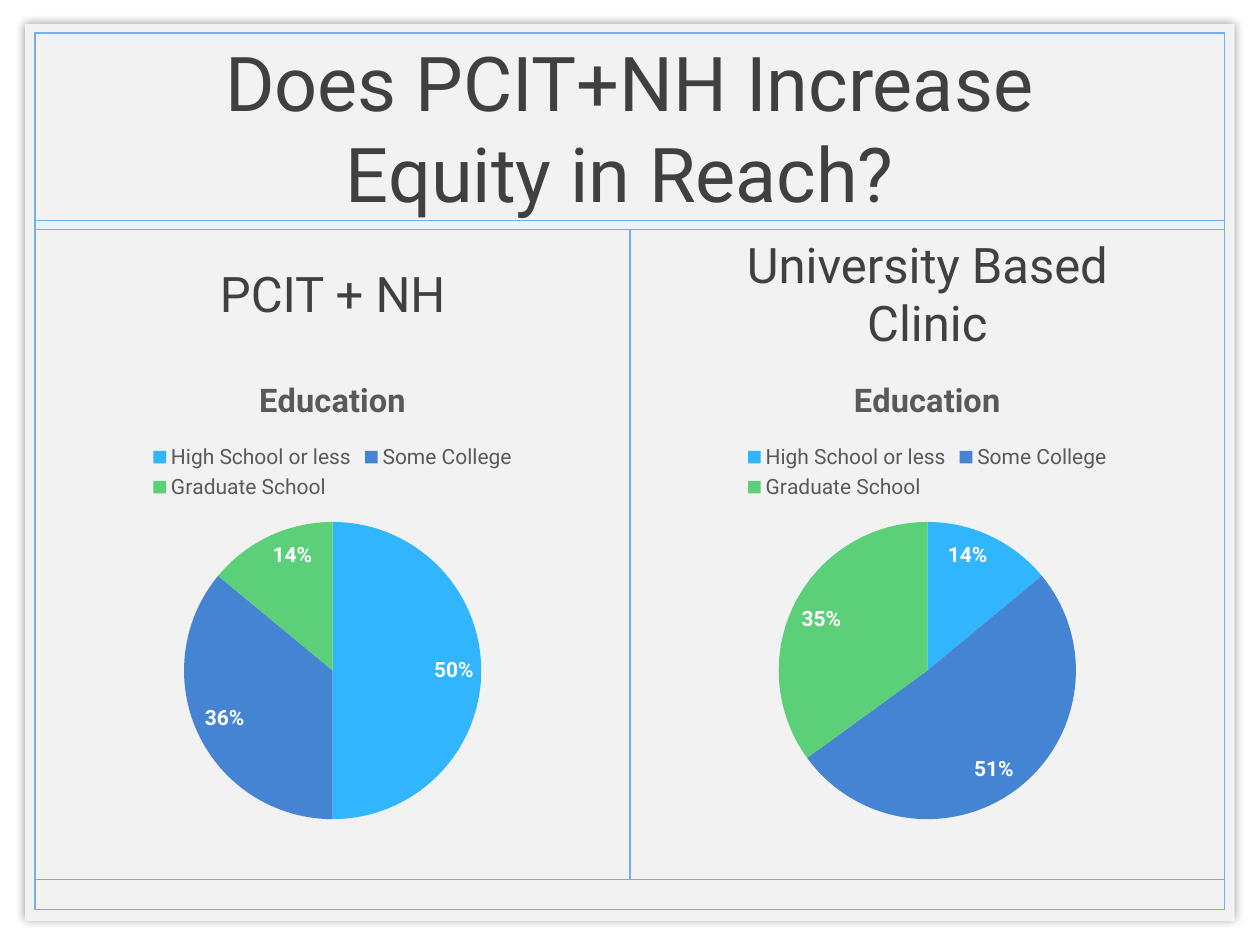
from dataclasses import dataclass

from lxml.etree import SubElement
from pptx import Presentation
from pptx.chart.data import CategoryChartData
from pptx.dml.color import RGBColor
from pptx.enum.chart import XL_CHART_TYPE, XL_LABEL_POSITION, XL_LEGEND_POSITION
from pptx.enum.shapes import MSO_CONNECTOR, MSO_SHAPE
from pptx.enum.text import MSO_ANCHOR, MSO_AUTO_SIZE, PP_ALIGN
from pptx.oxml.ns import qn
from pptx.util import Emu, Pt

FONT = "Roboto"
COLORS = {
    "panel": "F2F2F2",
    "border": "73ACF8",
    "band": "E8F5FE",
    "text": "404040",
    "chart_text": "595959",
    "label": "FFFFFF",
    "shadow": "000000",
}
LEVELS = {
    "High School or less": "31B6FD",
    "Some College": "4584D3",
    "Graduate School": "5BD078",
}
HEADING_TOP, HEADING_HEIGHT = 187, 91
CHART_TOP, CHART_HEIGHT = 283, 381
COLUMN_WIDTH = 390


@dataclass
class Program:
    heading: str
    left: int
    percents: tuple[int, ...]


PROGRAMS = [
    Program("PCIT + NH", 69, (50, 36, 14)),
    Program("University Based Clinic", 541, (14, 51, 35)),
]


def px(length: int) -> Emu:
    """Convert px, at 100 to the inch, to EMU."""
    return Emu(length * 9144)


def color(name: str) -> RGBColor:
    return RGBColor.from_string(COLORS[name])


def style_font(font, size: float, color_name: str, bold: bool = False) -> None:
    font.name = FONT
    font.size = Pt(size)
    font.bold = bold
    font.color.rgb = color(color_name)


def add_rectangle(slide, left: int, top: int, width: int, height: int,
                  fill: str | None = None, line_width: float = 0):
    rectangle = slide.shapes.add_shape(
        MSO_SHAPE.RECTANGLE, px(left), px(top), px(width), px(height))
    rectangle.shadow.inherit = False
    if fill:
        rectangle.fill.solid()
        rectangle.fill.fore_color.rgb = color(fill)
    else:
        rectangle.fill.background()
    if line_width:
        rectangle.line.color.rgb = color("border")
        rectangle.line.width = Pt(line_width)
    else:
        rectangle.line.fill.background()
    return rectangle


def add_soft_shadow(shape) -> None:
    effects = shape.element.spPr.find(qn("a:effectLst"))
    shadow = SubElement(effects, qn("a:outerShdw"), blurRad=str(Pt(5)),
                        dist="0", dir="0", algn="ctr", rotWithShape="0")
    tint = SubElement(shadow, qn("a:srgbClr"), val=COLORS["shadow"])
    SubElement(tint, qn("a:alpha"), val="40000")


def add_rule(slide, x1: int, y1: int, x2: int, y2: int):
    rule = slide.shapes.add_connector(
        MSO_CONNECTOR.STRAIGHT, px(x1), px(y1), px(x2), px(y2))
    rule.line.color.rgb = color("border")
    rule.line.width = Pt(1)
    SubElement(rule.element.spPr, qn("a:effectLst"))
    return rule


def write_centered(shape, text: str, size: float) -> None:
    frame = shape.text_frame
    frame.word_wrap = True
    frame.auto_size = MSO_AUTO_SIZE.NONE
    frame.vertical_anchor = MSO_ANCHOR.MIDDLE
    paragraph = frame.paragraphs[0]
    paragraph.alignment = PP_ALIGN.CENTER
    run = paragraph.add_run()
    run.text = text
    style_font(run.font, size, "text")


def draw_background(slide) -> None:
    panel = add_rectangle(slide, 20, 19, 960, 712, fill="panel")
    add_soft_shadow(panel)
    add_rectangle(slide, 28, 26, 944, 696, line_width=1)
    add_rule(slide, 28, 698, 972, 698)
    band = add_rectangle(slide, 28, 175, 944, 7, fill="band", line_width=0.25)
    divider = add_rule(slide, 500, 182, 500, 698)
    divider.begin_connect(band, 2)


def place_title(slide, text: str) -> None:
    title = slide.shapes.title
    title.left, title.top = px(98), px(27)
    title.width, title.height = px(803), px(147)
    write_centered(title, text, 43.2)
    # Bring the title in front of the panel.
    title.element.getparent().append(title.element)


def add_education_pie(slide, program: Program) -> None:
    education = CategoryChartData()
    education.categories = list(LEVELS)
    education.add_series("Education", program.percents)
    chart = slide.shapes.add_chart(
        XL_CHART_TYPE.PIE, px(program.left), px(CHART_TOP),
        px(COLUMN_WIDTH), px(CHART_HEIGHT), education).chart
    chart.font.name = FONT
    chart.font.size = Pt(10)

    chart.has_title = True
    title_run = chart.chart_title.text_frame.paragraphs[0].add_run()
    title_run.text = "Education"
    style_font(title_run.font, 18.6, "chart_text", bold=True)

    chart.has_legend = True
    chart.legend.position = XL_LEGEND_POSITION.TOP
    chart.legend.include_in_layout = False
    style_font(chart.legend.font, 12, "chart_text")

    pie = chart.plots[0]
    pie.vary_by_categories = True
    for index, level_color in enumerate(LEVELS.values()):
        slice_fill = pie.series[0].points[index].format.fill
        slice_fill.solid()
        slice_fill.fore_color.rgb = RGBColor.from_string(level_color)

    pie.has_data_labels = True
    labels = pie.data_labels
    labels.show_percentage = True
    labels.show_value = False
    labels.number_format = "0%"
    labels.number_format_is_linked = False
    labels.position = XL_LABEL_POSITION.INSIDE_END
    style_font(labels.font, 12, "label", bold=True)


def add_program(slide, program: Program) -> None:
    heading = slide.shapes.add_textbox(
        px(program.left), px(HEADING_TOP), px(COLUMN_WIDTH), px(HEADING_HEIGHT))
    write_centered(heading, program.heading, 28)
    add_education_pie(slide, program)


def main() -> None:
    presentation = Presentation()
    presentation.slide_width, presentation.slide_height = px(1000), px(750)
    slide = presentation.slides.add_slide(presentation.slide_layouts[5])
    draw_background(slide)
    place_title(slide, "Does PCIT+NH Increase Equity in Reach? ")
    for program in PROGRAMS:
        add_program(slide, program)
    presentation.save("out.pptx")


if __name__ == "__main__":
    main()
